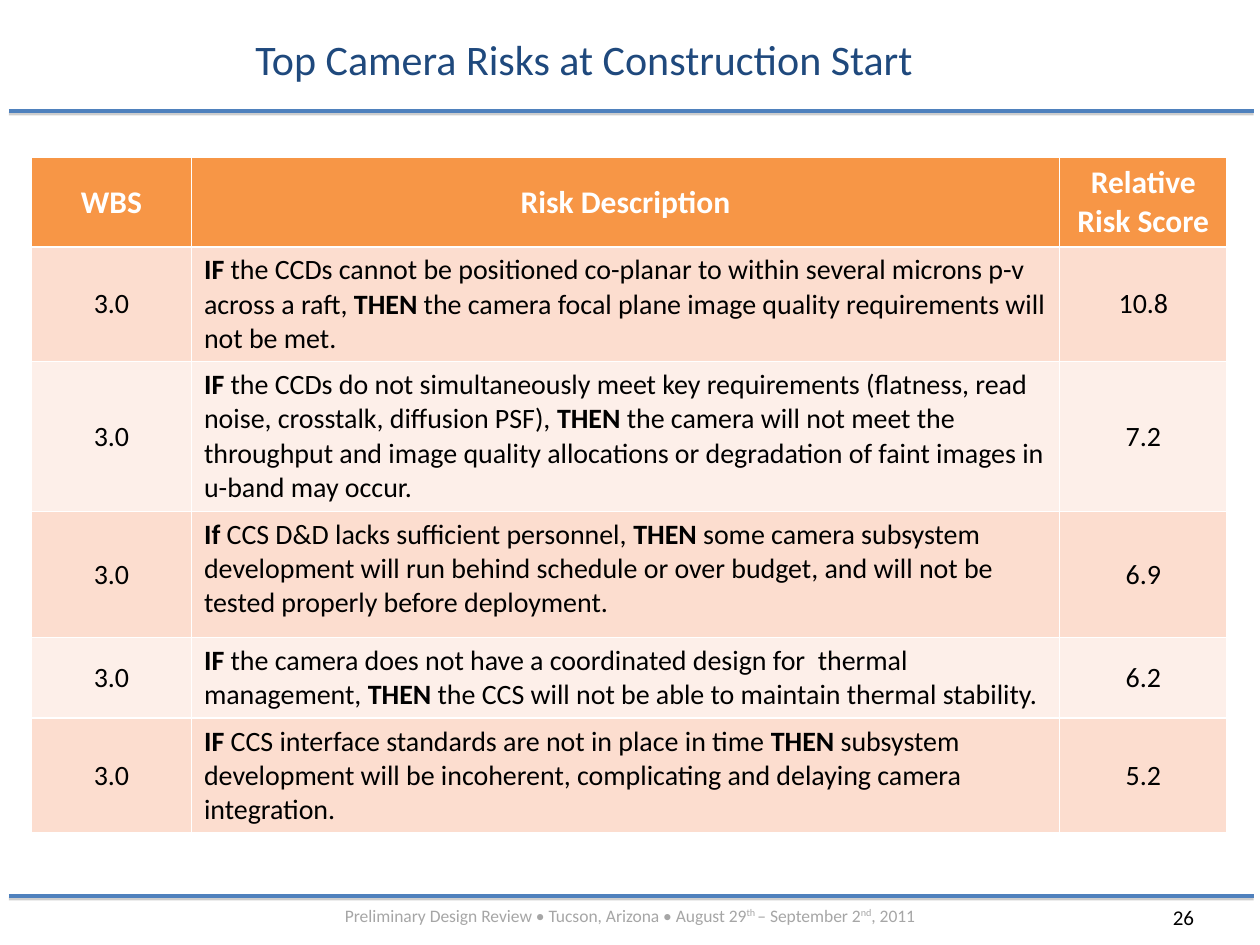
from lxml.etree import SubElement
from pptx import Presentation
from pptx.dml.color import RGBColor
from pptx.enum.shapes import MSO_CONNECTOR
from pptx.enum.text import MSO_ANCHOR, PP_ALIGN
from pptx.oxml.ns import qn
from pptx.util import Inches, Pt

FONT = "Calibri"
NAVY = RGBColor(0x1F, 0x49, 0x7D)
BLUE = RGBColor(0x4F, 0x81, 0xBD)
ORANGE = RGBColor(0xF7, 0x96, 0x46)
BANDS = (RGBColor(0xFC, 0xDD, 0xCF), RGBColor(0xFD, 0xEF, 0xE9))
GRAY = RGBColor(0xA6, 0xA6, 0xA6)
BLACK = RGBColor(0, 0, 0)
WHITE = RGBColor(0xFF, 0xFF, 0xFF)

TITLE = "Top Camera Risks at Construction Start"
PAGE_NUMBER = "26"
FOOTER = [  # (text, superscript)
    ("Preliminary Design Review • Tucson, Arizona • August 29", False),
    ("th ", True),
    ("– September 2", False),
    ("nd", True),
    (", 2011", False),
]
HEADERS = ["WBS", "Risk Description", "Relative Risk Score"]
RISKS = [  # (WBS, condition word, condition, consequence, score)
    ("3.0", "IF",
     " the CCDs cannot be positioned co-planar to within several microns p-v across a raft, ",
     " the camera focal plane image quality requirements will not be met.", "10.8"),
    ("3.0", "IF",
     " the CCDs do not simultaneously meet key requirements (flatness, read noise, "
     "crosstalk, diffusion PSF), ",
     " the camera will not meet the throughput and image quality allocations or "
     "degradation of faint images in u-band may occur.", "7.2"),
    ("3.0", "If", " CCS D&D lacks sufficient personnel, ",
     " some camera subsystem development will run behind schedule or over budget, "
     "and will not be tested properly before deployment.", "6.9"),
    ("3.0", "IF", " the camera does not have a coordinated design for  thermal management, ",
     " the CCS will not be able to maintain thermal stability.", "6.2"),
    ("3.0", "IF", " CCS interface standards are not in place in time ",
     " subsystem development will be incoherent, complicating and delaying camera "
     "integration.", "5.2"),
]
COLUMN_WIDTHS = [1.27, 6.89, 1.33]
ROW_HEIGHTS = [0.71, 0.91, 1.19, 1, 0.64, 0.91]
RULE_HEIGHTS = [0.88, 7.11]


def add_run(paragraph, text, size, color, bold=False):
    run = paragraph.add_run()
    run.text = text
    run.font.name = FONT
    run.font.size = Pt(size)
    run.font.bold = bold
    run.font.color.rgb = color
    return run


def add_rule(slide, y):
    """Draw a full-width blue line with a soft gray shadow beneath it."""
    rule = slide.shapes.add_connector(
        MSO_CONNECTOR.STRAIGHT, Inches(0.07), Inches(y), Inches(9.95), Inches(y))
    rule.line.color.rgb = BLUE
    rule.line.width = Pt(2)
    effects = SubElement(rule._element.spPr, qn("a:effectLst"))
    shadow = SubElement(effects, qn("a:outerShdw"), blurRad="0",
                        dist=str(Pt(1.6)), dir="5400000", rotWithShape="0")
    color = SubElement(shadow, qn("a:srgbClr"), val="808080")
    SubElement(color, qn("a:alpha"), val="38000")


def add_text_box(slide, left, top, width, height):
    box = slide.shapes.add_textbox(Inches(left), Inches(top), Inches(width), Inches(height))
    box.text_frame.word_wrap = True
    return box.text_frame.paragraphs[0]


def fill_cell(cell, runs, fill, size, color, centered=True):
    cell.fill.solid()
    cell.fill.fore_color.rgb = fill
    paragraph = cell.text_frame.paragraphs[0]
    if centered:
        cell.vertical_anchor = MSO_ANCHOR.MIDDLE
        paragraph.alignment = PP_ALIGN.CENTER
    for text, bold in runs:
        add_run(paragraph, text, size, color, bold)


def add_risk_table(slide):
    table = slide.shapes.add_table(
        len(ROW_HEIGHTS), len(COLUMN_WIDTHS), Inches(0.25), Inches(1.25),
        Inches(sum(COLUMN_WIDTHS)), Inches(sum(ROW_HEIGHTS))).table
    for column, width in zip(table.columns, COLUMN_WIDTHS):
        column.width = Inches(width)
    for row, height in zip(table.rows, ROW_HEIGHTS):
        row.height = Inches(height)

    for index, header in enumerate(HEADERS):
        fill_cell(table.cell(0, index), [(header, True)], ORANGE, 18, WHITE)
    for index, (wbs, word, condition, consequence, score) in enumerate(RISKS):
        description = [(word, True), (condition, False), ("THEN", True), (consequence, False)]
        for column, runs in enumerate([[(wbs, False)], description, [(score, False)]]):
            fill_cell(table.cell(index + 1, column), runs, BANDS[index % 2], 16, BLACK,
                      centered=column != 1)


def main():
    presentation = Presentation()
    presentation.slide_width = Inches(10)
    presentation.slide_height = Inches(7.5)
    slide = presentation.slides.add_slide(presentation.slide_layouts[5])

    for y in RULE_HEIGHTS:
        add_rule(slide, y)

    add_run(add_text_box(slide, 9.21, 7.13, 0.62, 0.3), PAGE_NUMBER, 12, BLACK)
    footer = add_text_box(slide, 0.5, 7.13, 9, 0.27)
    footer.alignment = PP_ALIGN.CENTER
    for text, superscript in FOOTER:
        run = add_run(footer, text, 10, GRAY)
        if superscript:
            run.font._element.set("baseline", "30000")

    title = slide.shapes.title
    title.left, title.top = Inches(1.25), Inches(0.16)
    title.width, title.height = Inches(6.77), Inches(0.61)
    title.text_frame.vertical_anchor = MSO_ANCHOR.MIDDLE
    paragraph = title.text_frame.paragraphs[0]
    paragraph.alignment = PP_ALIGN.CENTER
    add_run(paragraph, TITLE, 24, NAVY)

    add_risk_table(slide)
    presentation.save("out.pptx")


if __name__ == "__main__":
    main()
